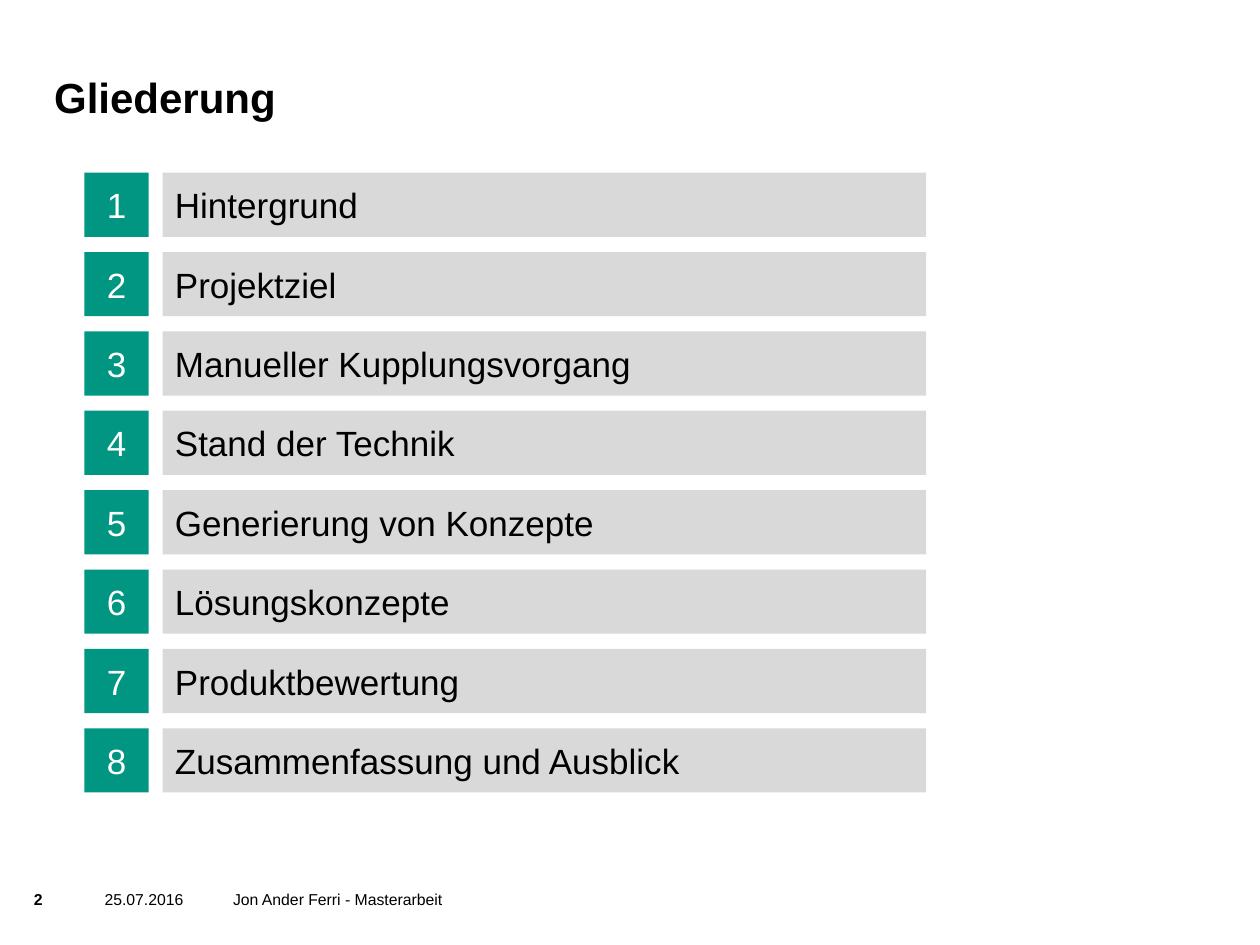
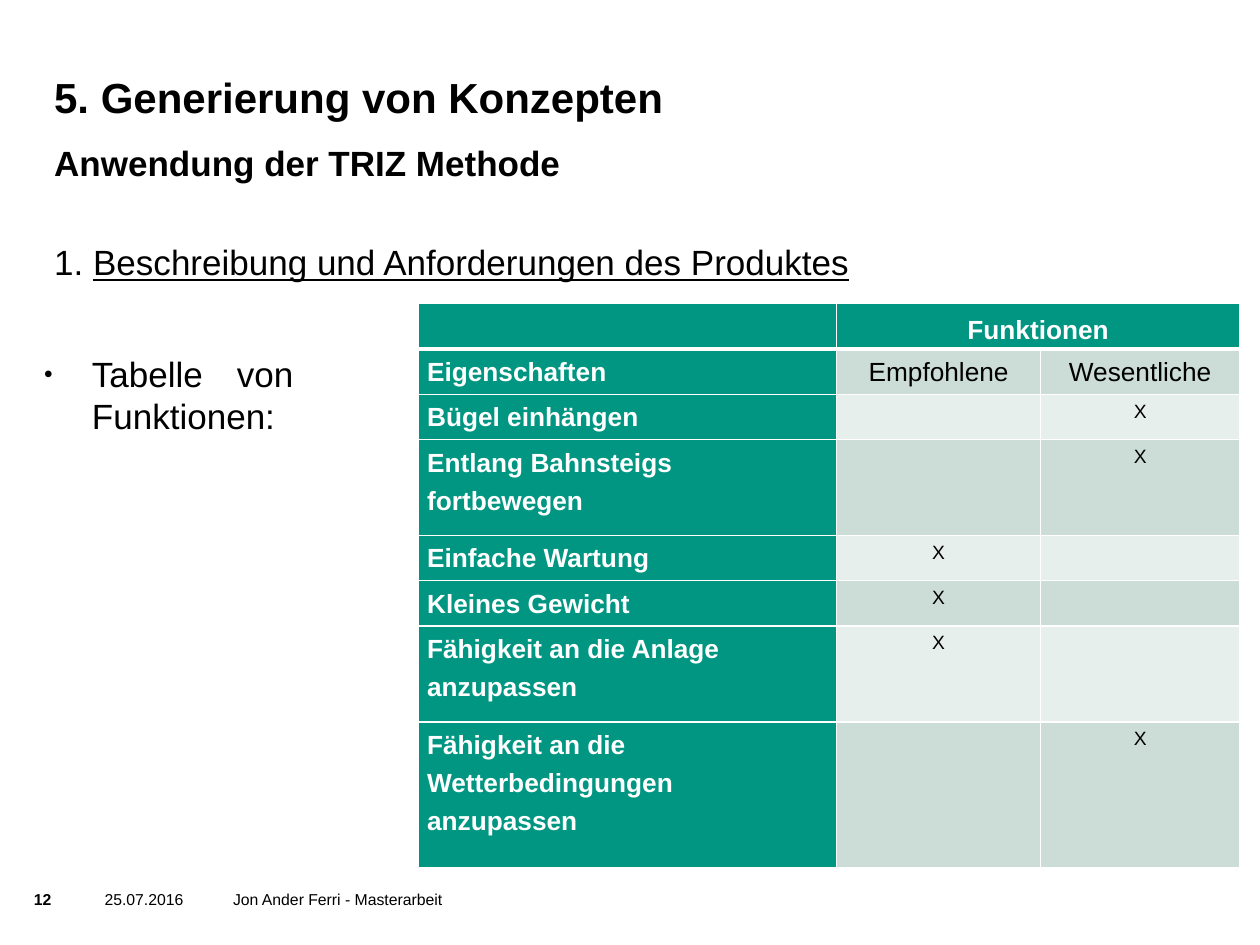
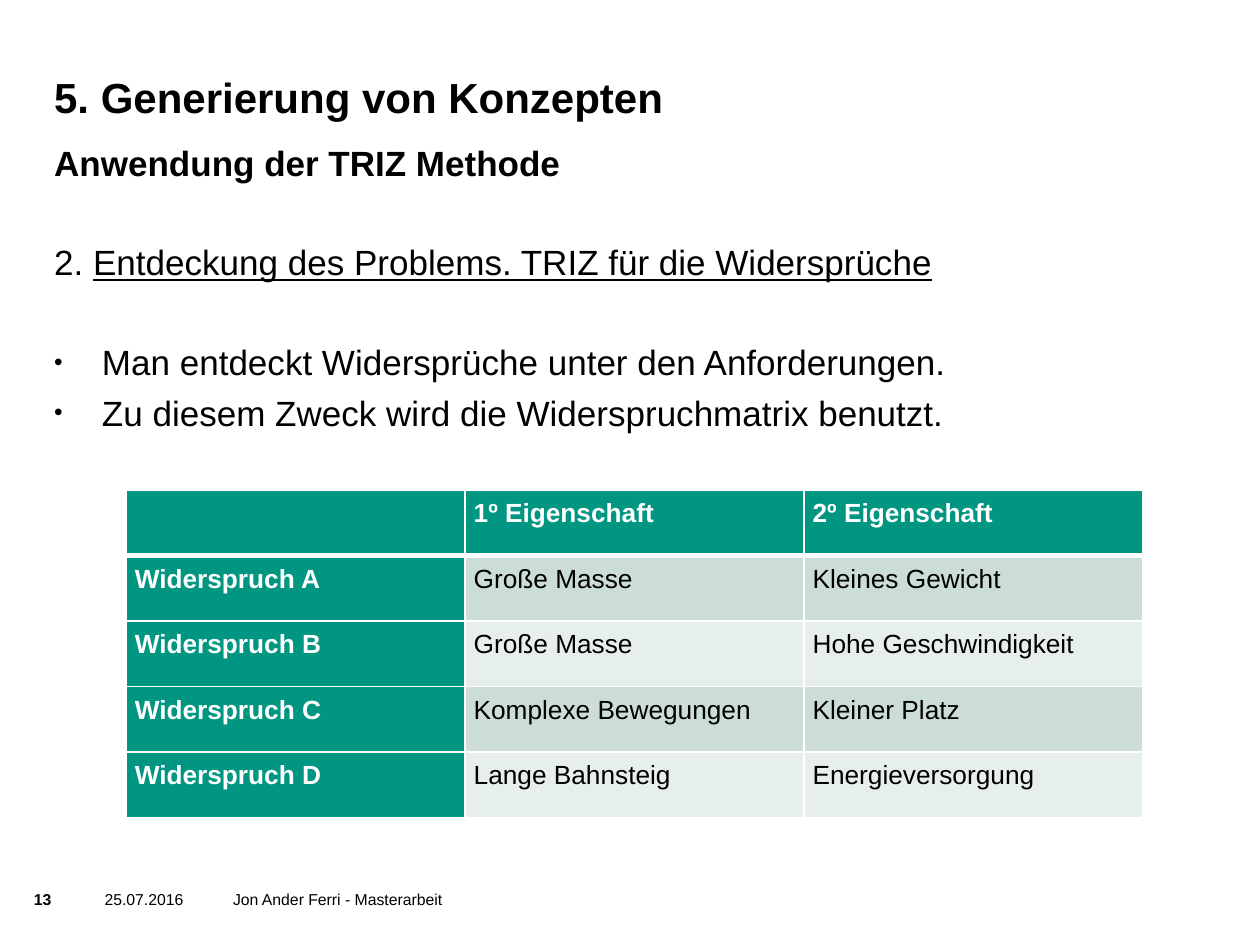
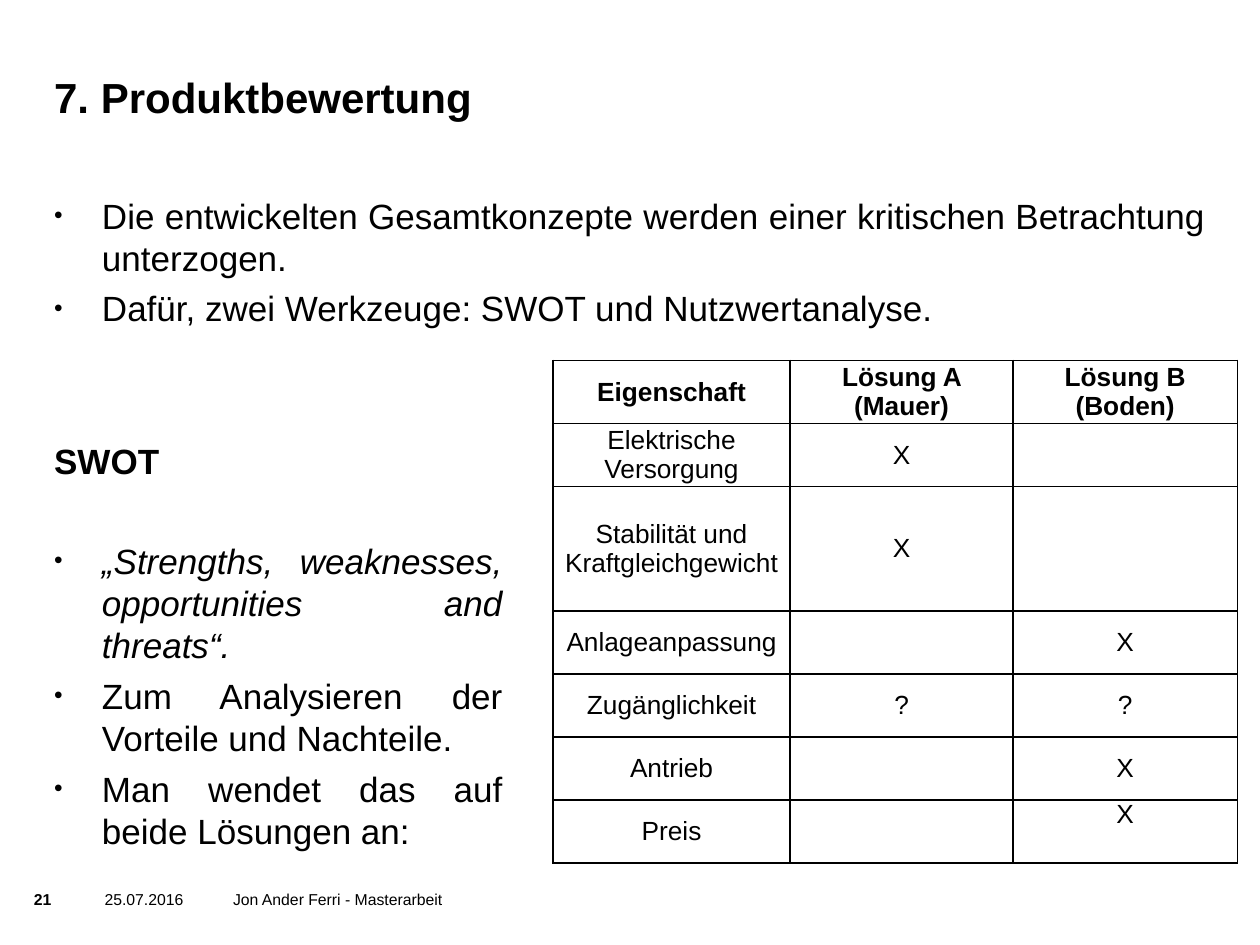
from lxml import etree
from pptx import Presentation
from pptx import util as u
from pptx.dml.color import RGBColor
from pptx.enum import shapes, text
from pptx.oxml import ns

COLORS = {
    "text": "000000",
    "white": "FFFFFF",
    "green": "009682",
    "bar": "D9D9D9",
    "band_dark": "CCDDD8",
    "band_light": "E7EFED",
}
FONT = "Arial"
ALIGN = text.PP_ALIGN
ANCHOR = text.MSO_ANCHOR
AUTHOR = "Jon Ander Ferri - Masterarbeit"
DATE = "25.07.2016"
SUBTITLE = "Anwendung der TRIZ Methode"
WIDE_GAP = 33
LINE_GAP = 5

AGENDA = [
    "Hintergrund",
    "Projektziel",
    "Manueller Kupplungsvorgang",
    "Stand der Technik",
    "Generierung von Konzepte",
    "Lösungskonzepte",
    "Produktbewertung",
    "Zusammenfassung und Ausblick",
]
FUNCTIONS = [
    ("", "Funktionen", ""),
    ("Eigenschaften", "Empfohlene", "Wesentliche"),
    ("Bügel einhängen", "", "X"),
    ("Entlang Bahnsteigs fortbewegen", "", "X"),
    ("Einfache Wartung", "X", ""),
    ("Kleines Gewicht", "X", ""),
    ("Fähigkeit an die Anlage anzupassen", "X", ""),
    ("Fähigkeit an die Wetterbedingungen anzupassen", "", "X"),
]
CONFLICTS = [
    ("", "1º Eigenschaft", "2º Eigenschaft"),
    ("Widerspruch A", "Große Masse", "Kleines Gewicht"),
    ("Widerspruch B", "Große Masse", "Hohe Geschwindigkeit"),
    ("Widerspruch C", "Komplexe Bewegungen", "Kleiner Platz"),
    ("Widerspruch D", "Lange Bahnsteig", "Energieversorgung"),
]
SOLUTIONS = [
    ("Eigenschaft", "Lösung A (Mauer)", "Lösung B (Boden)"),
    ("Elektrische Versorgung", "X", ""),
    ("Stabilität und Kraftgleichgewicht", "X", ""),
    ("Anlageanpassung", "", "X"),
    ("Zugänglichkeit", "?", "?"),
    ("Antrieb", "", "X"),
    ("Preis", "", "X"),
]


def rgb(name):
    return RGBColor.from_string(COLORS[name])


def set_font(para, size, color="text", bold=False, italic=False):
    font = para.font
    font.name = FONT
    font.size = u.Pt(size)
    font.bold = bold
    font.italic = italic
    font.color.rgb = rgb(color)


def add_text_frame(page, box, anchor=ANCHOR.TOP):
    frame = page.shapes.add_textbox(*map(u.Inches, box)).text_frame
    frame.word_wrap = True
    frame.vertical_anchor = anchor
    frame.margin_left = frame.margin_right = 0
    frame.margin_top = frame.margin_bottom = 0
    return frame


def add_label(page, box, words, size, bold=False, anchor=ANCHOR.TOP):
    para = add_text_frame(page, box, anchor).paragraphs[0]
    para.text = words
    set_font(para, size, bold=bold)


def add_bullet(para):
    properties = para._p.get_or_add_pPr()
    properties.set("marL", str(u.Inches(0.38)))
    properties.set("indent", str(-u.Inches(0.38)))
    etree.SubElement(properties, ns.qn("a:buSzPct"), val="70000")
    etree.SubElement(properties, ns.qn("a:buFont"), typeface=FONT)
    etree.SubElement(properties, ns.qn("a:buChar"), char="•")


def add_body(page, box, lines):
    frame = add_text_frame(page, box)
    previous = None
    for kind, words in lines:
        para = frame.paragraphs[0] if previous is None else frame.add_paragraph()
        para.alignment = ALIGN.JUSTIFY
        if kind in ("bullet", "quote"):
            add_bullet(para)
        if previous:
            close = previous in ("bullet", "quote")
            para.space_before = u.Pt(LINE_GAP if close else WIDE_GAP)
        if kind == "topic":
            number, name = words.split(" ", 1)
            para.add_run().text = number + " "
            span = para.add_run()
            span.text = name
            span.font.underline = True
        else:
            para.text = words
        set_font(para, 20, bold=kind == "heading", italic=kind == "quote")
        previous = kind


def add_page(deck, number, title):
    page = deck.slides.add_slide(deck.slide_layouts[6])
    add_label(page, (0.43, 0.36, 7.71, 0.61), title, 24, True, ANCHOR.BOTTOM)
    add_label(page, (0.27, 7.06, 0.36, 0.24), str(number), 9, True)
    add_label(page, (0.83, 7.06, 0.89, 0.24), DATE, 9)
    add_label(page, (1.85, 7.06, 4.57, 0.39), AUTHOR, 9)
    return page


def add_bar(page, box, words, fill, color, align):
    bar = page.shapes.add_shape(shapes.MSO_SHAPE.RECTANGLE, *map(u.Inches, box))
    bar.shadow.inherit = False
    bar.fill.solid()
    bar.fill.fore_color.rgb = rgb(fill)
    bar.line.fill.background()
    bar.text_frame.vertical_anchor = ANCHOR.MIDDLE
    para = bar.text_frame.paragraphs[0]
    para.text = words
    para.alignment = align
    set_font(para, 20, color)


def add_agenda(page, left, top, items):
    side, pitch, offset = 0.51, 0.63, 0.62
    for index, item in enumerate(items):
        row_top = top + index * pitch
        add_bar(page, (left, row_top, side, side), str(index + 1),
                "green", "white", ALIGN.CENTER)
        add_bar(page, (left + offset, row_top, 6.06, side), item,
                "bar", "text", ALIGN.LEFT)


def set_borders(cell, color, bottom_width):
    properties = cell._tc.get_or_add_tcPr()
    for index, side in enumerate("LRTB"):
        width = bottom_width if side == "B" else 1
        line = etree.Element(ns.qn(f"a:ln{side}"), w=str(u.Pt(width)))
        fill = etree.SubElement(line, ns.qn("a:solidFill"))
        etree.SubElement(fill, ns.qn("a:srgbClr"), val=COLORS[color])
        properties.insert(index, line)


def add_grid(page, left, top, widths, heights, rows, style_cell):
    box = map(u.Inches, (left, top, sum(widths), sum(heights)))
    table = page.shapes.add_table(len(rows), len(widths), *box).table
    for column, width in zip(table.columns, widths):
        column.width = u.Inches(width)
    for row, height in zip(table.rows, heights):
        row.height = u.Inches(height)
    for row_index, values in enumerate(rows):
        for column_index, value in enumerate(values):
            cell = table.cell(row_index, column_index)
            cell.margin_left = cell.margin_right = u.Inches(0.07)
            cell.margin_top = cell.margin_bottom = 0
            para = cell.text_frame.paragraphs[0]
            para.text = value
            style_cell(cell, para, row_index, column_index)
    return table


def style_banded(cell, para, row, column):
    header = row == 0 or column == 0
    band = "band_dark" if row % 2 else "band_light"
    cell.fill.solid()
    cell.fill.fore_color.rgb = rgb("green" if header else band)
    set_borders(cell, "white", 1 if row else 3)
    para.line_spacing = 1.3
    para.space_after = u.Pt(6)
    para.alignment = ALIGN.JUSTIFY
    set_font(para, 15, "white" if header else "text", header)


def style_functions(cell, para, row, column):
    style_banded(cell, para, row, column)
    para.alignment = ALIGN.CENTER if column else ALIGN.LEFT
    if row == 0:
        cell.vertical_anchor = ANCHOR.MIDDLE
    if row > 1 and column:
        para.font.size = u.Pt(11)


def style_solutions(cell, para, row, column):
    cell.fill.background()
    set_borders(cell, "text", 1)
    last = (row, column) == (len(SOLUTIONS) - 1, 2)
    cell.vertical_anchor = ANCHOR.TOP if last else ANCHOR.MIDDLE
    para.alignment = ALIGN.CENTER
    para.space_after = u.Pt(18)
    set_font(para, 15, bold=row == 0)


def build_agenda(deck):
    page = add_page(deck, 2, "Gliederung")
    add_agenda(page, 0.67, 1.37, AGENDA)


def build_functions(deck):
    page = add_page(deck, 12, "5. Generierung von Konzepten")
    add_body(page, (0.43, 1.12, 8.97, 1.2), [
        ("heading", SUBTITLE),
        ("topic", "1. Beschreibung und Anforderungen des Produktes"),
    ])
    add_body(page, (0.35, 2.8, 1.98, 0.8), [("bullet", "Tabelle von Funktionen:")])
    heights = [0.36, 0.36, 0.36, 0.76, 0.36, 0.36, 0.76, 1.16]
    table = add_grid(page, 3.32, 2.41, [3.32, 1.62, 1.58], heights,
                     FUNCTIONS, style_functions)
    table.cell(0, 1).merge(table.cell(0, 2))


def build_conflicts(deck):
    page = add_page(deck, 13, "5. Generierung von Konzepten")
    add_body(page, (0.43, 1.12, 8.97, 2.4), [
        ("heading", SUBTITLE),
        ("topic", "2. Entdeckung des Problems. TRIZ für die Widersprüche"),
        ("bullet", "Man entdeckt Widersprüche unter den Anforderungen."),
        ("bullet", "Zu diesem Zweck wird die Widerspruchmatrix benutzt."),
    ])
    add_grid(page, 1, 3.89, [2.69] * 3, [0.52] * 5, CONFLICTS, style_banded)


def build_evaluation(deck):
    page = add_page(deck, 21, "7. Produktbewertung")
    add_body(page, (0.43, 1.54, 9.14, 1.2), [
        ("bullet", "Die entwickelten Gesamtkonzepte werden einer kritischen "
                   "Betrachtung unterzogen."),
        ("bullet", "Dafür, zwei Werkzeuge: SWOT und Nutzwertanalyse."),
    ])
    add_body(page, (0.43, 3.49, 3.56, 3.5), [
        ("heading", "SWOT"),
        ("quote", "„Strengths, weaknesses, opportunities and threats“."),
        ("bullet", "Zum Analysieren der Vorteile und Nachteile."),
        ("bullet", "Man wendet das auf beide Lösungen an:"),
    ])
    heights = [0.5, 0.5, 0.99, 0.5, 0.5, 0.5, 0.5]
    add_grid(page, 4.39, 2.86, [1.88, 1.77, 1.78], heights,
             SOLUTIONS, style_solutions)


def main():
    deck = Presentation()
    deck.slide_width = u.Inches(10)
    deck.slide_height = u.Inches(7.5)
    build_agenda(deck)
    build_functions(deck)
    build_conflicts(deck)
    build_evaluation(deck)
    deck.save("out.pptx")


if __name__ == "__main__":
    main()
